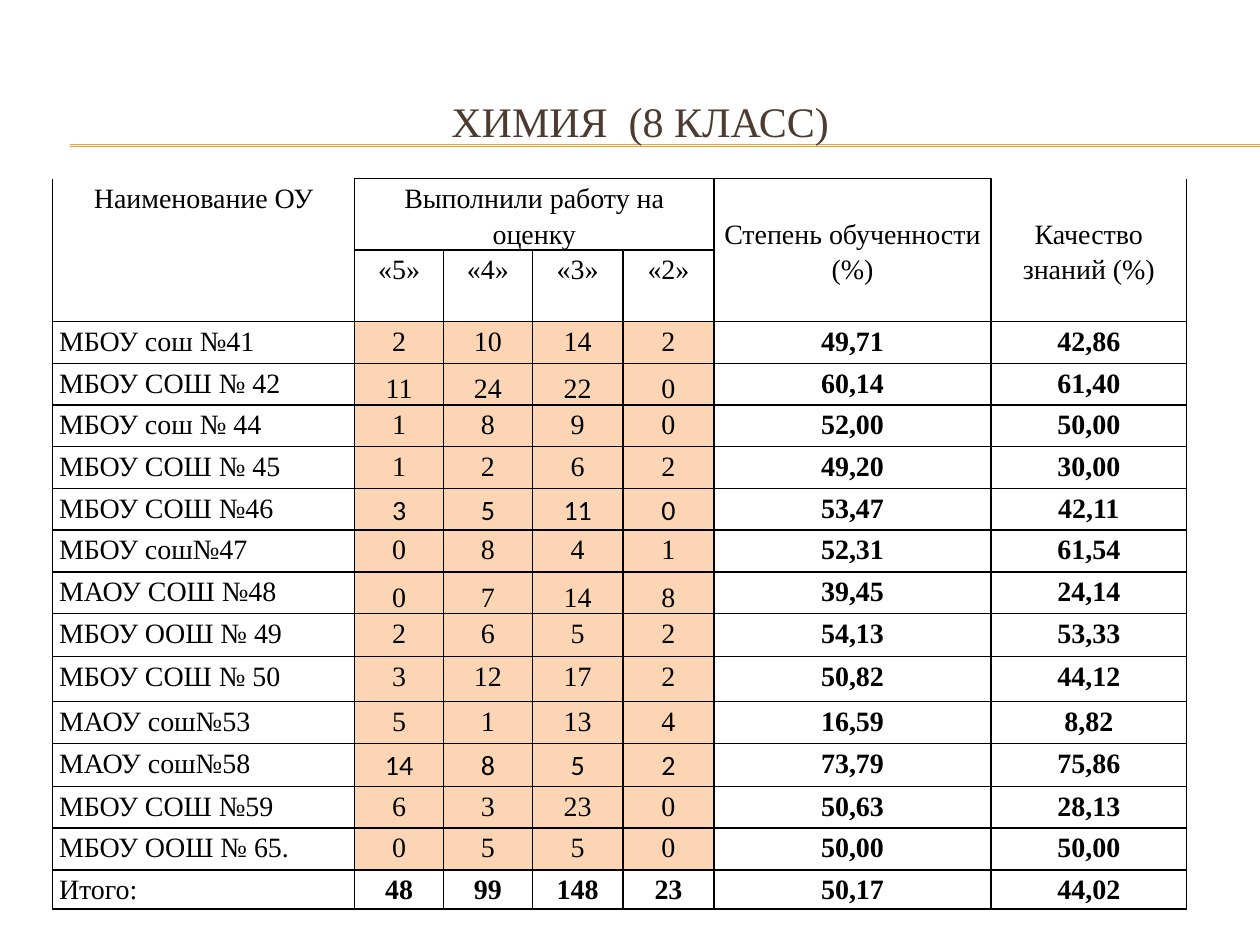
from lxml.etree import SubElement
from pptx import Presentation
from pptx.dml.color import RGBColor
from pptx.enum.shapes import MSO_CONNECTOR
from pptx.enum.text import MSO_ANCHOR, MSO_AUTO_SIZE, PP_ALIGN
from pptx.oxml.ns import qn
from pptx.util import Cm, Pt

THEME = {
    "serif": "Times New Roman", "sans": "Calibri",
    "title": Pt(24), "body": Pt(16), "rule": Pt(0.75), "grid": Pt(1),
    "brown": "4E3B30", "gold": "F0A22E", "ink": "000000",
    "white": "FFFFFF", "peach": "FCD5B4",
}

TITLE = "ХИМИЯ  (8 КЛАСС)"
HEADS = [
    (0, 0, 1, 0, "Наименование ОУ", MSO_ANCHOR.TOP),
    (0, 1, 0, 4, "Выполнили работу на оценку", MSO_ANCHOR.TOP),
    (0, 5, 1, 5, "Степень обученности (%)", MSO_ANCHOR.MIDDLE),
    (0, 6, 1, 6, "Качество знаний (%)", MSO_ANCHOR.MIDDLE),
]
MARKS = ["«5»", "«4»", "«3»", "«2»"]
SCHOOLS = [
    ("МБОУ сош №41", 2, 10, 14, 2, "49,71", "42,86"),
    ("МБОУ СОШ № 42", 11, 24, 22, 0, "60,14", "61,40"),
    ("МБОУ сош № 44", 1, 8, 9, 0, "52,00", "50,00"),
    ("МБОУ СОШ № 45", 1, 2, 6, 2, "49,20", "30,00"),
    ("МБОУ СОШ №46", 3, 5, 11, 0, "53,47", "42,11"),
    ("МБОУ сош№47", 0, 8, 4, 1, "52,31", "61,54"),
    ("МАОУ СОШ №48", 0, 7, 14, 8, "39,45", "24,14"),
    ("МБОУ ООШ № 49", 2, 6, 5, 2, "54,13", "53,33"),
    ("МБОУ СОШ № 50", 3, 12, 17, 2, "50,82", "44,12"),
    ("МАОУ сош№53", 5, 1, 13, 4, "16,59", "8,82"),
    ("МАОУ сош№58", 14, 8, 5, 2, "73,79", "75,86"),
    ("МБОУ СОШ №59", 6, 3, 23, 0, "50,63", "28,13"),
    ("МБОУ ООШ № 65.", 0, 5, 5, 0, "50,00", "50,00"),
]
TOTAL = ("Итого:", 48, 99, 148, 23, "50,17", "44,02")
LOW = {"МБОУ СОШ № 42", "МАОУ СОШ №48"}
SANS = {"МБОУ СОШ №46", "МАОУ сош№58"}
WIDTHS = [6.09, 1.79, 1.79, 1.83, 1.83, 5.59, 3.94]
HEIGHTS = [1.27, 0.66] + [0.84] * 7 + [0.87, 0.91, 0.84, 0.87, 0.84, 0.84, 0.79]


def color(name):
    return RGBColor.from_string(THEME[name])


def style(frame, size, ink, font="serif", bold=False, align=PP_ALIGN.CENTER):
    for para in frame.paragraphs:
        para.alignment = align
        for run in para.runs:
            run.font.name = THEME[font]
            run.font.size = THEME[size]
            run.font.bold = bold
            run.font.color.rgb = color(ink)


def border(cell, bare):
    props = cell._tc.get_or_add_tcPr()
    for side in "LRTB":
        line = SubElement(props, qn("a:ln" + side), w=str(THEME["grid"]))
        if side in bare:
            SubElement(line, qn("a:noFill"))
        else:
            fill = SubElement(line, qn("a:solidFill"))
            SubElement(fill, qn("a:srgbClr"), val=THEME["ink"])


def write(cell, text, anchor=MSO_ANCHOR.TOP, fill=None, **look):
    cell.text_frame.text = str(text)
    cell.vertical_anchor = anchor
    style(cell.text_frame, "body", "ink", **look)
    cell.text_frame.paragraphs[0].line_spacing = 1.15
    if fill:
        cell.fill.solid()
        cell.fill.fore_color.rgb = color(fill)


def add_rule(slide, top):
    rule = slide.shapes.add_connector(
        MSO_CONNECTOR.STRAIGHT, Cm(1.42), Cm(top), Cm(25.4), Cm(top))
    rule.line.color.rgb = color("gold")
    rule.line.width = THEME["rule"]
    SubElement(rule.element.spPr, qn("a:effectLst"))


def add_title(slide):
    title = slide.shapes.title
    title.left, title.top, title.width, title.height = Cm(0.84), Cm(1.27), Cm(24.13), Cm(2.34)
    frame = title.text_frame
    frame.text = TITLE
    frame.auto_size = MSO_AUTO_SIZE.NONE
    frame.vertical_anchor = MSO_ANCHOR.MIDDLE
    style(frame, "title", "brown")
    title.element.getparent().append(title.element)


def add_grid(slide):
    grid = slide.shapes.add_table(
        len(HEIGHTS), len(WIDTHS), Cm(1.06), Cm(3.6),
        Cm(sum(WIDTHS)), Cm(sum(HEIGHTS))).table
    grid.first_row = grid.horz_banding = False
    for col, width in zip(grid.columns, WIDTHS):
        col.width = Cm(width)
    for row, height in zip(grid.rows, HEIGHTS):
        row.height = Cm(height)
    for r in range(len(HEIGHTS)):
        for c in range(len(WIDTHS)):
            cell = grid.cell(r, c)
            cell.margin_left = cell.margin_right = Cm(0.13)
            cell.margin_top = cell.margin_bottom = 0
            border(cell, "T" if r == 0 and c in (0, 6) else "")
            cell.fill.background()
    for top, left, bottom, right, text, anchor in HEADS:
        grid.cell(top, left).merge(grid.cell(bottom, right))
        write(grid.cell(top, left), text, anchor)
    for c, mark in enumerate(MARKS, 1):
        write(grid.cell(1, c), mark)
    for r, row in enumerate(SCHOOLS + [TOTAL], 2):
        name, last = row[0], row is TOTAL
        write(grid.cell(r, 0), name, fill=None if last else "white", align=PP_ALIGN.LEFT)
        for c, count in enumerate(row[1:5], 1):
            write(grid.cell(r, c), count,
                  MSO_ANCHOR.BOTTOM if name in LOW else MSO_ANCHOR.TOP,
                  None if last else "peach",
                  font="sans" if name in SANS else "serif", bold=last)
        for c, rate in enumerate(row[5:], 5):
            write(grid.cell(r, c), rate, bold=True)


def main():
    deck = Presentation()
    deck.slide_width, deck.slide_height = Cm(25.4), Cm(19.05)
    slide = deck.slides.add_slide(deck.slide_layouts[5])
    for top in (2.92, 2.95):
        add_rule(slide, top)
    add_title(slide)
    add_grid(slide)
    deck.save("out.pptx")


if __name__ == "__main__":
    main()
